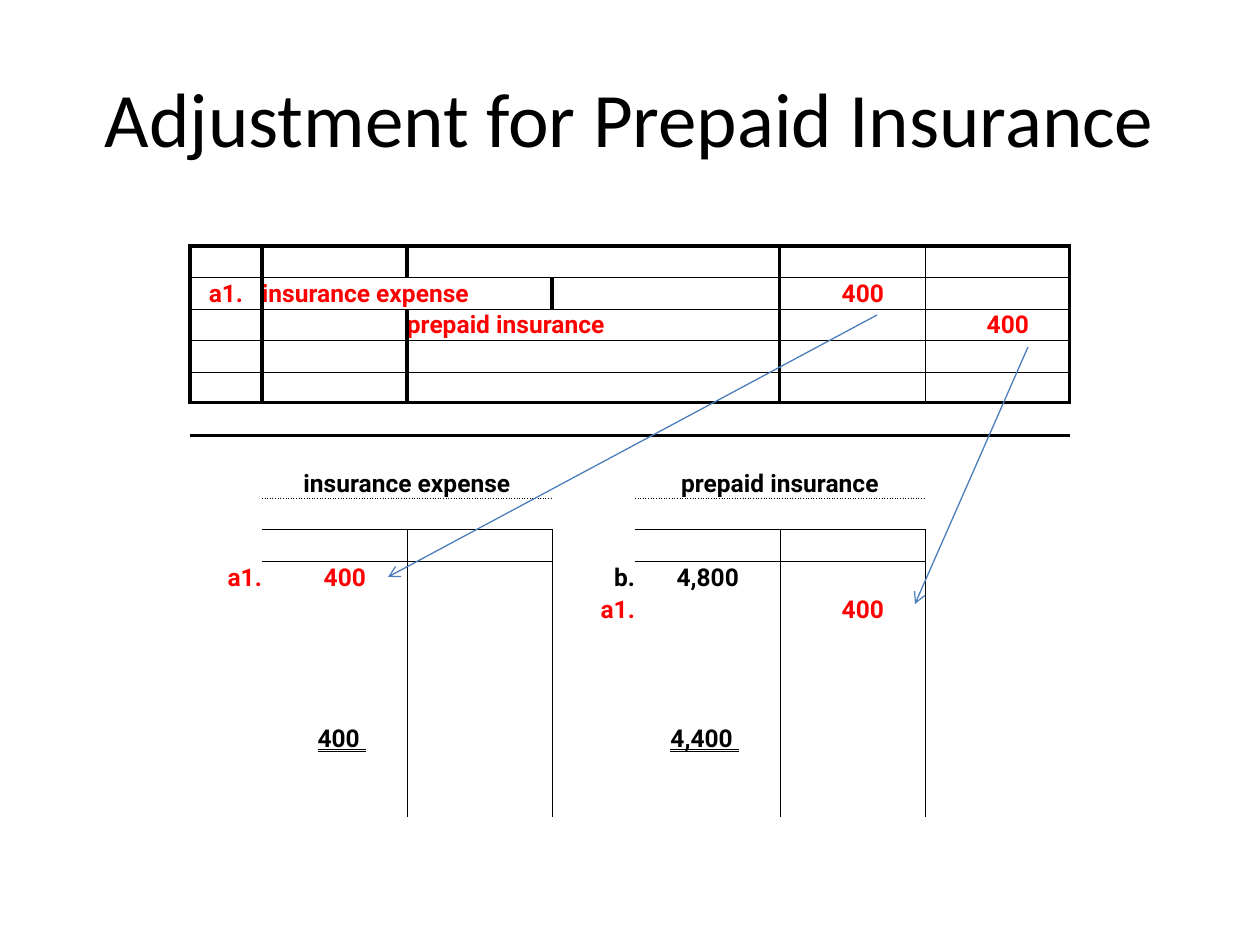
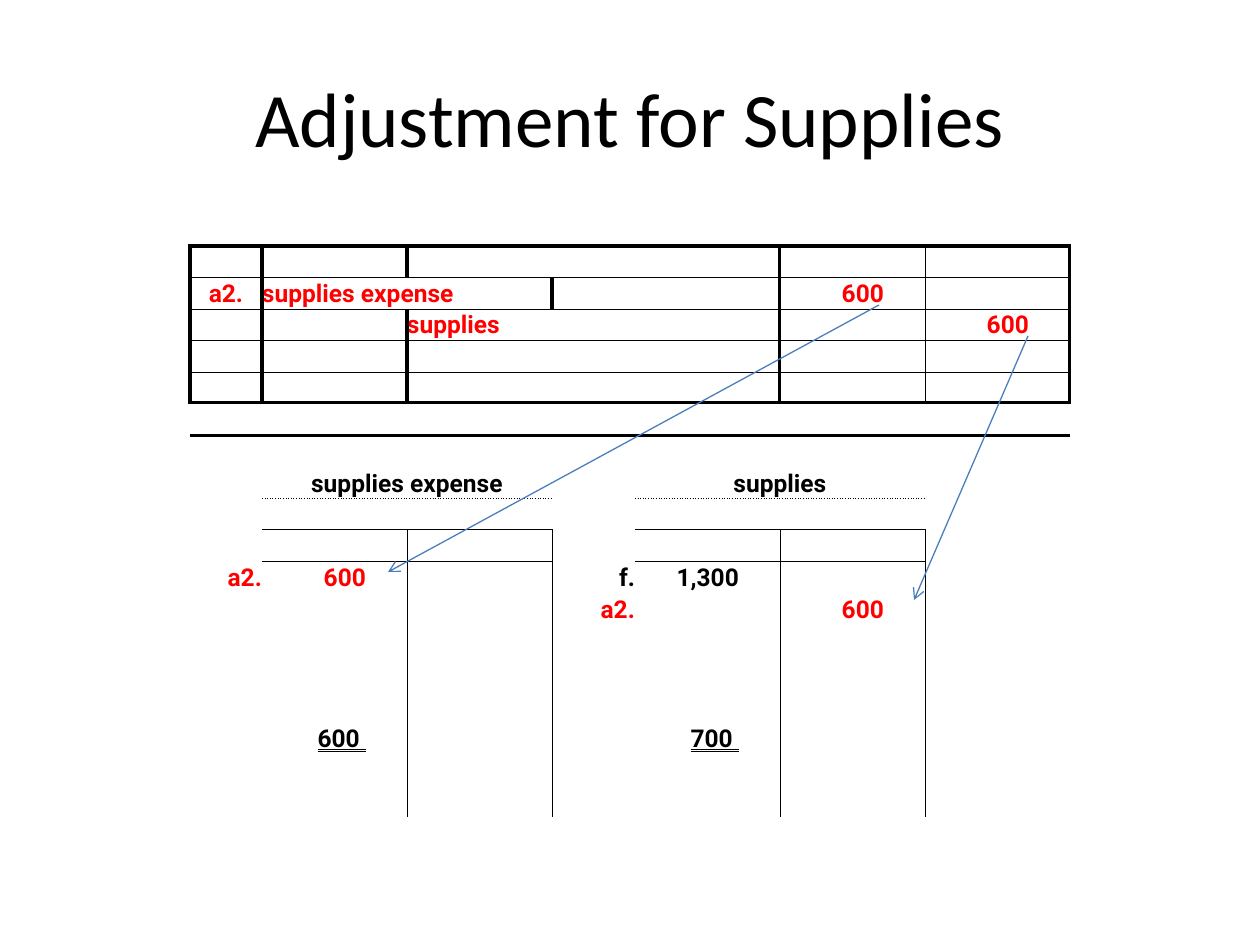
from collections import defaultdict

from lxml.etree import SubElement
from pptx import Presentation
from pptx.dml.color import RGBColor
from pptx.enum.shapes import MSO_CONNECTOR
from pptx.enum.text import MSO_ANCHOR, PP_ALIGN
from pptx.oxml.ns import qn
from pptx.util import Emu, Pt

COLORS = {"ink": "000000", "adjustment": "FF0000", "arrow": "4B7EBC"}
NO_STYLE = "{2D5ABB26-0587-4C30-8999-92F81FD0307C}"

PAGE_SIZE = (1260, 945)
TITLE_BOX = (63, 38, 1134, 158)
LEDGER_BOX = (190, 246, 880, 571)

COLUMN_WIDTHS = [72, 145, 145, 83, 145, 145, 145]
ROW_HEIGHTS = [31, 32] * 9
ROW_HEIGHTS[5] = 33
ROW_HEIGHTS[15] = 35
AMOUNT_END = 104

JOURNAL_ROWS = range(5)
NAME_ROW, CROSSBAR_ROW, FIRST_ROW, BALANCE_ROW = 7, 9, 10, 15
EXPENSE_COLUMN, ASSET_COLUMN = 1, 4
THICK, THIN = 2, 0.5

TITLE_FONT = {"name": "Calibri", "size": Pt(44), "bold": False}
LEDGER_FONT = {"name": "Roboto", "size": Pt(14), "bold": True}

PAGES = [
    {
        "title": "Adjustment for Prepaid Insurance",
        "mark": "a1.",
        "expense": "insurance expense",
        "asset": "prepaid insurance",
        "asset_span": 3,
        "amount": "400",
        "opening": ("b.", "4,800"),
        "balance": "4,400",
        "arrows": [((687, 69), (198, 331)), ((838, 101), (725, 358))],
    },
    {
        "title": "Adjustment for Supplies",
        "mark": "a2.",
        "expense": "supplies expense",
        "asset": "supplies",
        "asset_span": 1,
        "amount": "600",
        "opening": ("f.", "1,300"),
        "balance": "700",
        "arrows": [((689, 59), (198, 326)), ((838, 90), (724, 354))],
    },
]


def px(length):
    return Emu(round(length * 914400 / 126))


def set_format(target, values):
    for name, value in values.items():
        setattr(target, name, value)


def write(para, text, font, color):
    span = para.add_run()
    span.text = text
    set_format(span.font, font)
    span.font.color.rgb = RGBColor.from_string(COLORS[color])
    return span


def add_title(page, text, box):
    title = page.shapes.title
    set_format(title, dict(zip(("left", "top", "width", "height"), map(px, box))))
    title.text_frame.vertical_anchor = MSO_ANCHOR.MIDDLE
    para = title.text_frame.paragraphs[0]
    para.alignment = PP_ALIGN.CENTER
    write(para, text, TITLE_FONT, "ink")


def fill_cell(table, row, column, text, color="ink", align=PP_ALIGN.LEFT, span=1):
    cell = table.cell(row, column)
    if span > 1:
        cell.merge(table.cell(row, column + span - 1))
    para = cell.text_frame.paragraphs[0]
    para.alignment = align
    return write(para, text, LEDGER_FONT, color)


def fill_amount(table, row, column, text, color="ink"):
    fill_cell(table, row, column, text, color, PP_ALIGN.RIGHT)
    table.cell(row, column).margin_right = px(COLUMN_WIDTHS[column] - AMOUNT_END)


def fill_balance(table, column, text):
    span = fill_cell(table, BALANCE_ROW, column, f"\t{text} ")
    span.font.underline = True
    span.font._element.set("u", "dbl")
    para = table.cell(BALANCE_ROW, column).text_frame.paragraphs[0]
    stops = SubElement(para._p.get_or_add_pPr(), qn("a:tabLst"))
    SubElement(stops, qn("a:tab"), pos=str(px(AMOUNT_END)), algn="r")


def fill_journal(table, content):
    red = "adjustment"
    fill_cell(table, 1, 0, content["mark"], red, PP_ALIGN.CENTER)
    fill_cell(table, 1, 1, content["expense"], red, span=2)
    fill_amount(table, 1, 5, content["amount"], red)
    fill_cell(table, 2, 2, content["asset"], red, span=content["asset_span"])
    fill_amount(table, 2, 6, content["amount"], red)


def fill_account(table, column, name, entries, balance):
    fill_cell(table, NAME_ROW, column, name, align=PP_ALIGN.CENTER, span=2)
    for row, (mark, side, amount, color) in enumerate(entries, FIRST_ROW):
        fill_cell(table, row, column - 1, mark, color, PP_ALIGN.RIGHT)
        fill_amount(table, row, column + side, amount, color)
    fill_balance(table, column, balance)


def plan_borders():
    borders = defaultdict(dict)

    def horizontal(edge, columns, weight, dash="solid"):
        for column in columns:
            borders[edge - 1, column]["lnB"] = (weight, dash)
            borders[edge, column]["lnT"] = (weight, dash)

    def vertical(edge, rows, weight):
        for row in rows:
            borders[row, edge - 1]["lnR"] = (weight, "solid")
            borders[row, edge]["lnL"] = (weight, "solid")

    for edge in range(len(JOURNAL_ROWS) + 1):
        weight = THICK if edge in (0, len(JOURNAL_ROWS)) else THIN
        horizontal(edge, range(len(COLUMN_WIDTHS)), weight)
    for edge in (0, 1, 5, 6, 7):
        vertical(edge, JOURNAL_ROWS, THIN if edge == 6 else THICK)
    for column in (EXPENSE_COLUMN, ASSET_COLUMN):
        sides = (column, column + 1)
        horizontal(NAME_ROW + 1, sides, THIN, "sysDot")
        horizontal(CROSSBAR_ROW, sides, THIN)
        vertical(column + 1, range(CROSSBAR_ROW, len(ROW_HEIGHTS)), THIN)
    return borders


def draw_borders(cell, sides):
    properties = cell._tc.get_or_add_tcPr()
    for tag in ("lnL", "lnR", "lnT", "lnB"):
        if tag in sides:
            weight, dash = sides[tag]
            line = SubElement(properties, qn(f"a:{tag}"), w=str(Pt(weight)))
            fill = SubElement(line, qn("a:solidFill"))
            SubElement(fill, qn("a:srgbClr"), val=COLORS["ink"])
            SubElement(line, qn("a:prstDash"), val=dash)


def add_ledger(page, content, box):
    frame = page.shapes.add_table(
        len(ROW_HEIGHTS), len(COLUMN_WIDTHS), *map(px, box)
    )
    table = frame.table
    set_format(table, {"first_row": False, "horz_banding": False})
    table._tbl.tblPr.find(qn("a:tableStyleId")).text = NO_STYLE
    for column, width in zip(table.columns, COLUMN_WIDTHS):
        column.width = px(width)
    for row, height in zip(table.rows, ROW_HEIGHTS):
        row.height = px(height)

    borders = plan_borders()
    cell_format = {f"margin_{side}": 0 for side in ("left", "right", "top", "bottom")}
    cell_format["vertical_anchor"] = MSO_ANCHOR.BOTTOM
    for row in range(len(ROW_HEIGHTS)):
        for column in range(len(COLUMN_WIDTHS)):
            cell = table.cell(row, column)
            set_format(cell, cell_format)
            draw_borders(cell, borders[row, column])
            cell.fill.background()

    mark, amount = content["mark"], content["amount"]
    adjustment = (mark, 0, amount, "adjustment")
    opening_mark, opening = content["opening"]
    asset_entries = [
        (opening_mark, 0, opening, "ink"),
        (mark, 1, amount, "adjustment"),
    ]
    fill_journal(table, content)
    fill_account(table, EXPENSE_COLUMN, content["expense"], [adjustment], amount)
    fill_account(
        table, ASSET_COLUMN, content["asset"], asset_entries, content["balance"]
    )
    for cell in table.iter_cells():
        para = cell.text_frame.paragraphs[0]
        if not para.runs:
            SubElement(para._p, qn("a:endParaRPr"), sz="1400")


def add_arrows(page, arrows, box):
    left, top = box[:2]
    for (x1, y1), (x2, y2) in arrows:
        arrow = page.shapes.add_connector(
            MSO_CONNECTOR.STRAIGHT,
            px(left + x1), px(top + y1), px(left + x2), px(top + y2),
        )
        arrow.line.color.rgb = RGBColor.from_string(COLORS["arrow"])
        arrow.line.width = Pt(0.75)
        SubElement(arrow.line._get_or_add_ln(), qn("a:tailEnd"), type="arrow")
        SubElement(arrow._element.spPr, qn("a:effectLst"))


def add_adjustment_page(deck, content):
    page = deck.slides.add_slide(deck.slide_layouts[5])
    add_title(page, content["title"], TITLE_BOX)
    add_ledger(page, content, LEDGER_BOX)
    add_arrows(page, content["arrows"], LEDGER_BOX)


def main():
    deck = Presentation()
    deck.slide_width, deck.slide_height = map(px, PAGE_SIZE)
    for content in PAGES:
        add_adjustment_page(deck, content)
    deck.save("out.pptx")


if __name__ == "__main__":
    main()
